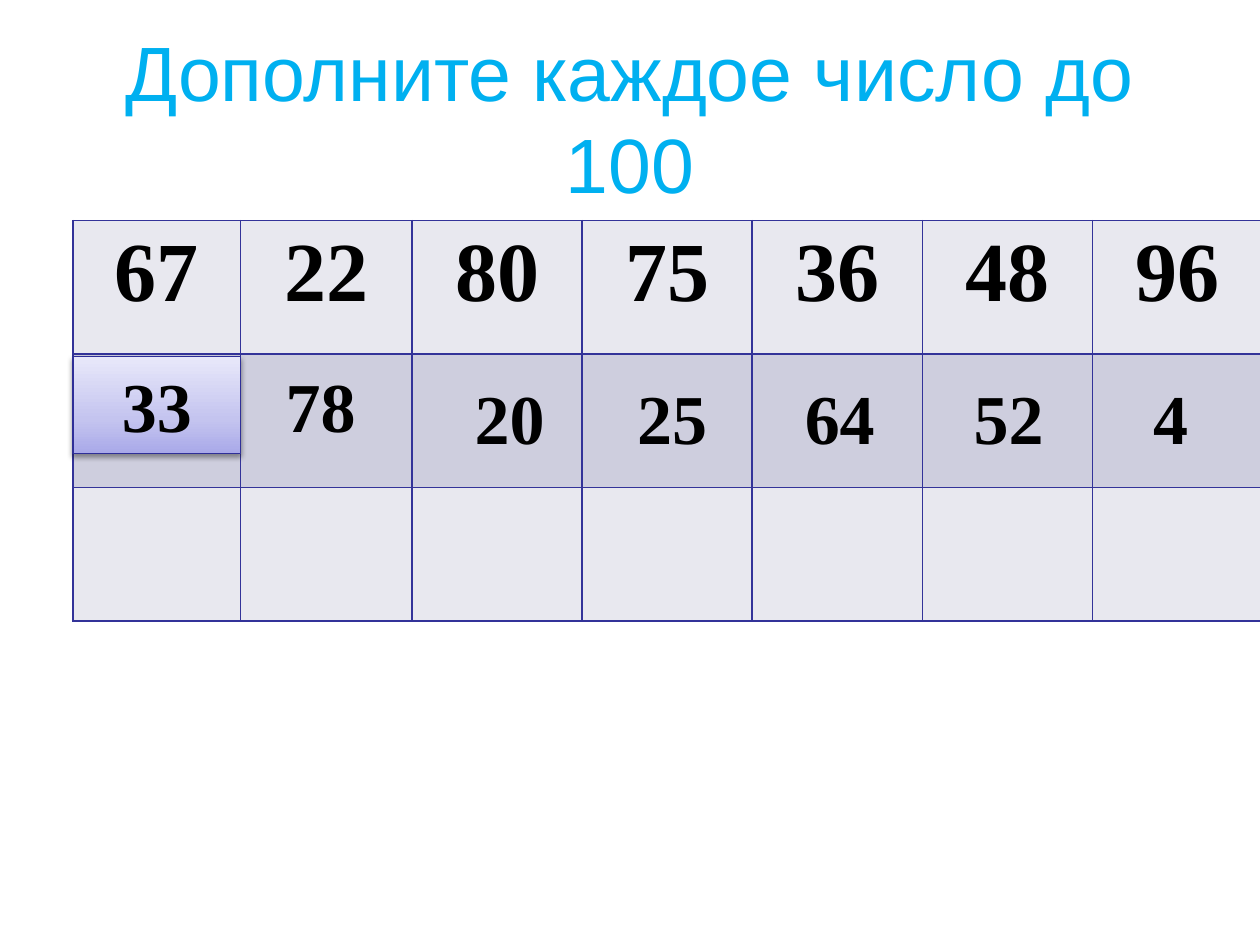
from dataclasses import dataclass

from lxml import etree
from pptx import Presentation
from pptx.dml.color import RGBColor
from pptx.enum.shapes import MSO_SHAPE
from pptx.enum.text import MSO_ANCHOR, MSO_AUTO_SIZE, PP_ALIGN
from pptx.oxml import parse_xml
from pptx.oxml.ns import nsdecls, qn
from pptx.util import Inches, Pt

CENTER = PP_ALIGN.CENTER
MIDDLE = MSO_ANCHOR.MIDDLE
GROW = MSO_AUTO_SIZE.SHAPE_TO_FIT_TEXT
RECT = MSO_SHAPE.RECTANGLE

TITLE_FONT = {"name": "Arial", "size": Pt(44), "bold": False}
NUMBER_FONT = {"name": "Times New Roman", "size": Pt(48), "bold": True}
ANSWER_FONT = {**NUMBER_FONT, "size": Pt(40)}

NUMBERS = ["67", "22", "80", "75", "36", "48", "96"]
COL_WIDTHS = [1.33, 1.36] + [1.35] * 5
ROW_FILLS = ["E8E8EF", "CECEDE", "E8E8EF"]
ROW_HEIGHT = 1.06
BORDER = "333399"
GRADIENT = [(0, "A9A9E9"), (35, "C4C4EF"), (100, "E8E8FA")]


@dataclass
class Answer:
    text: str
    left: float
    top: float
    width: float


FIRST_ANSWER = Answer("33", 0.58, 2.83, 1.33)
ANSWERS = [
    Answer("78", 1.92, 2.83, 1.25),
    Answer("20", 3.42, 2.92, 1.25),
    Answer("25", 4.75, 2.92, 1.17),
    Answer("64", 6.08, 2.92, 1.17),
    Answer("52", 7.42, 2.92, 1.17),
    Answer("4", 8.75, 2.92, 1.08),
]
ANSWER_HEIGHT = 0.77


def rgb(color: str) -> RGBColor:
    return RGBColor.from_string(color)


def write(tf, text: str, font: dict, color: str = "000000") -> None:
    p = tf.paragraphs[0]
    p.alignment = CENTER
    r = p.add_run()
    r.text = text
    for name, value in font.items():
        setattr(r.font, name, value)
    r.font.color.rgb = rgb(color)


def add_title(slide, text: str) -> None:
    tf = slide.shapes.add_textbox(Inches(0.5), Inches(0.3), Inches(9), Inches(1.25)).text_frame
    tf.word_wrap = True
    tf.vertical_anchor = MIDDLE
    write(tf, text, TITLE_FONT, "00B0F0")


def set_borders(cell, color: str, width: float) -> None:
    tc_pr = cell._tc.get_or_add_tcPr()
    for side in ("lnL", "lnR", "lnT", "lnB"):
        ln = etree.SubElement(tc_pr, qn(f"a:{side}"), w=str(Pt(width)))
        fill = etree.SubElement(ln, qn("a:solidFill"))
        etree.SubElement(fill, qn("a:srgbClr"), val=color)


def add_number_table(slide) -> None:
    table = slide.shapes.add_table(
        len(ROW_FILLS), len(NUMBERS), Inches(0.58), Inches(1.75),
        Inches(sum(COL_WIDTHS)), Inches(ROW_HEIGHT * len(ROW_FILLS))).table
    for col, width in zip(table.columns, COL_WIDTHS):
        col.width = Inches(width)
    for row, fill in zip(table.rows, ROW_FILLS):
        row.height = Inches(ROW_HEIGHT)
        for cell in row.cells:
            set_borders(cell, BORDER, 1)
            cell.fill.solid()
            cell.fill.fore_color.rgb = rgb(fill)
    for cell, number in zip(table.rows[0].cells, NUMBERS):
        write(cell.text_frame, number, NUMBER_FONT)


def place(answer: Answer) -> list:
    return [Inches(v) for v in (answer.left, answer.top, answer.width, ANSWER_HEIGHT)]


def write_answer(sp, answer: Answer) -> None:
    tf = sp.text_frame
    tf.word_wrap = True
    tf.auto_size = GROW
    write(tf, answer.text, ANSWER_FONT)


def add_answer(slide, answer: Answer) -> None:
    write_answer(slide.shapes.add_textbox(*place(answer)), answer)


def add_answer_card(slide, answer: Answer) -> None:
    sp = slide.shapes.add_shape(RECT, *place(answer))
    sp.line.color.rgb = rgb("2F2F98")
    sp.line.width = Pt(0.75)

    # Three-stop gradient, dark at the bottom
    sp.fill.gradient()
    sp.fill.gradient_angle = 90
    stops = sp._element.spPr.find(qn("a:gradFill")).find(qn("a:gsLst"))
    for stop in list(stops):
        stops.remove(stop)
    for pos, color in GRADIENT:
        gs = etree.SubElement(stops, qn("a:gs"), pos=str(pos * 1000))
        etree.SubElement(gs, qn("a:srgbClr"), val=color)

    # Soft shadow below
    sp.shadow.inherit = False
    sp._element.spPr.find(qn("a:effectLst")).append(parse_xml(
        f'<a:outerShdw {nsdecls("a")} blurRad="{Pt(3.1)}" dist="{Pt(1.6)}" '
        'dir="5400000" rotWithShape="0"><a:srgbClr val="000000">'
        '<a:alpha val="38000"/></a:srgbClr></a:outerShdw>'))
    write_answer(sp, answer)
    sp.text_frame.vertical_anchor = MSO_ANCHOR.TOP


def main() -> None:
    prs = Presentation()
    prs.slide_width, prs.slide_height = Inches(10), Inches(7.5)
    slide = prs.slides.add_slide(prs.slide_layouts[6])

    # Title and number grid
    add_title(slide, "Дополните каждое число до 100")
    add_number_table(slide)

    # Answers over the second row
    add_answer_card(slide, FIRST_ANSWER)
    for answer in ANSWERS:
        add_answer(slide, answer)

    prs.save("out.pptx")


if __name__ == "__main__":
    main()
